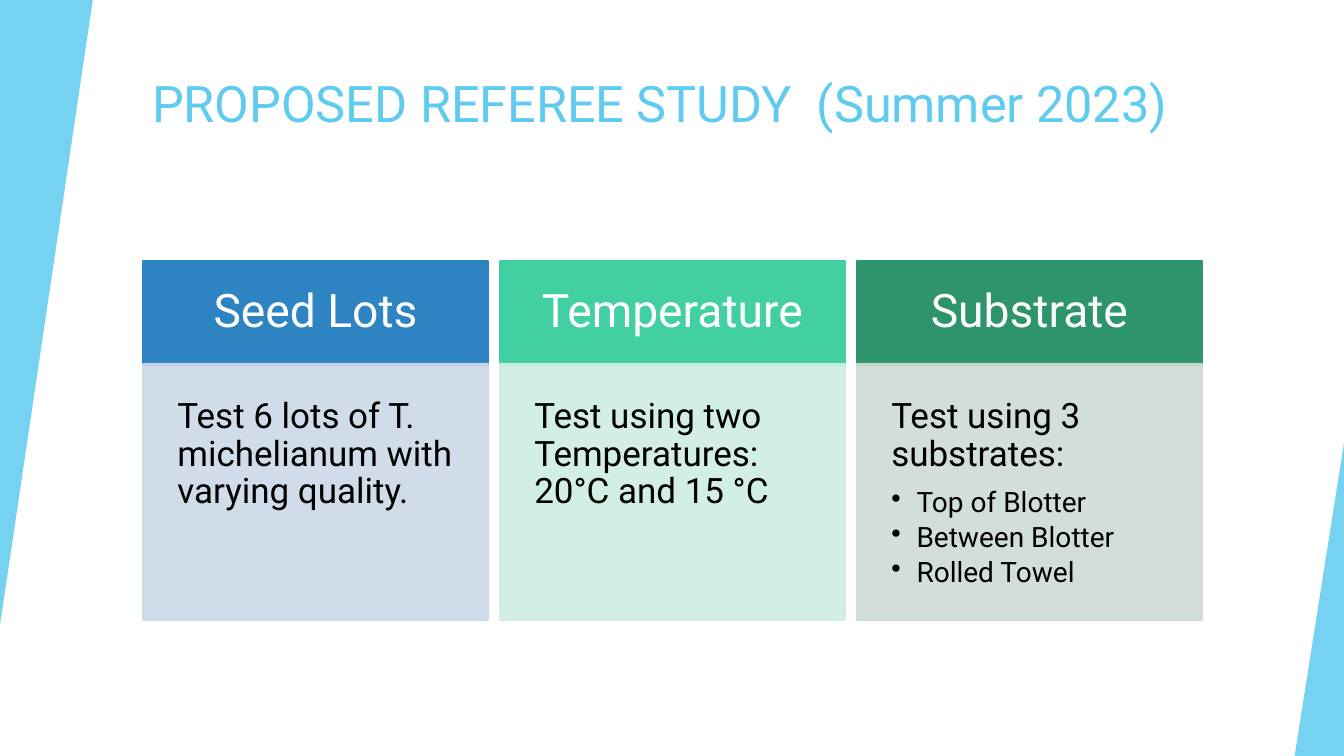
from lxml import etree
from pptx import Presentation
from pptx.dml.color import RGBColor
from pptx.enum.shapes import MSO_SHAPE as SHAPE
from pptx.enum.text import MSO_ANCHOR as ANCHOR, PP_ALIGN as ALIGN
from pptx.oxml.ns import qn
from pptx.util import Inches, Pt

COLORS = {
    "sky": "5FCBEF", "white": "FFFFFF", "black": "000000",
    "blue": "2E83C3", "pale_blue": "CDD9E9",
    "mint": "42D0A2", "pale_mint": "CFEEE0",
    "green": "2E946B", "pale_green": "CDDCD4",
}


def add_block(shape, x, y, w, h, color, alpha=100, outline=None):
    """Add a filled shape; alpha is the opacity in percent for fill and line."""
    sp = s.shapes.add_shape(shape, Inches(x), Inches(y), Inches(w), Inches(h))
    sp.shadow.inherit = False
    fills = [sp.fill]
    if outline:
        sp.line.width = Pt(outline)
        fills.append(sp.line.fill)
    else:
        sp.line.fill.background()
    for fill in fills:
        fill.solid()
        fill.fore_color.rgb = RGBColor.from_string(COLORS[color])
    if alpha < 100:
        for clr in sp._element.spPr.iter(qn("a:srgbClr")):
            etree.SubElement(clr, qn("a:alpha"), val=str(alpha * 1000))
    return sp


def write(sp, lines, size, color, inset=0.1, inset_y=0.05, anchor=ANCHOR.TOP,
          align=ALIGN.LEFT, spacing=0.9, bullet_size=20):
    """Write the first line plain and any further lines as bullets."""
    tf = sp.text_frame
    tf.word_wrap = True
    tf.vertical_anchor = anchor
    tf.margin_left = tf.margin_right = Inches(inset)
    tf.margin_top = tf.margin_bottom = Inches(inset_y)
    for i, line in enumerate(lines):
        p = tf.paragraphs[0] if i == 0 else tf.add_paragraph()
        p.alignment = align
        p.line_spacing = spacing
        if len(lines) > 1:
            p.space_after = Pt(3.5 if i else 10.2)
        if i:
            pPr = p._p.get_or_add_pPr()
            pPr.set("marL", str(Inches(0.25)))
            pPr.set("indent", str(-Inches(0.25)))
            etree.SubElement(pPr, qn("a:buChar"), char="•")
        r = p.add_run()
        r.text = line
        r.font.name = "Roboto"
        r.font.size = Pt(bullet_size if i else size)
        r.font.color.rgb = RGBColor.from_string(COLORS[color])


prs = Presentation()
prs.slide_width, prs.slide_height = Inches(13.33), Inches(7.5)
s = prs.slides.add_slide(prs.slide_layouts[6])

title = s.shapes.add_textbox(Inches(1.41), Inches(0.67), Inches(11.15), Inches(1.2))
write(title, ["PROPOSED REFEREE STUDY  (Summer 2023)"], 36, "sky", spacing=1.0)

left_wedge = add_block(SHAPE.ISOSCELES_TRIANGLE, 0, 0, 0.92, 6.2, "sky", alpha=85)
left_wedge.rotation = 180
right_wedge = add_block(SHAPE.ISOSCELES_TRIANGLE, 12.84, 4.39, 0.49, 3.11, "sky", alpha=85)
for wedge in (left_wedge, right_wedge):
    wedge.adjustments[0] = 1.0

columns = [
    ("Seed Lots", "blue", ["Test 6 lots of T. michelianum with varying quality."]),
    ("Temperature", "mint", ["Test using two Temperatures: 20°C and 15 °C"]),
    ("Substrate", "green", ["Test using 3 substrates:", "Top of Blotter",
                            "Between Blotter", "Rolled Towel"]),
]
LEFT, STEP, WIDTH = 1.42, 3.54, 3.42
for i, (heading, color, details) in enumerate(columns):
    x = LEFT + i * STEP
    header = add_block(SHAPE.RECTANGLE, x, 2.59, WIDTH, 1.03, color, outline=1.5)
    write(header, [heading], 33, "white", inset=0.27, inset_y=0.27,
          anchor=ANCHOR.MIDDLE, align=ALIGN.CENTER)
    body = add_block(SHAPE.RECTANGLE, x, 3.61, WIDTH, 2.54, "pale_" + color,
                     alpha=90, outline=1.5)
    write(body, details, 25, "black", inset=0.34, inset_y=0.34)

prs.save("out.pptx")
